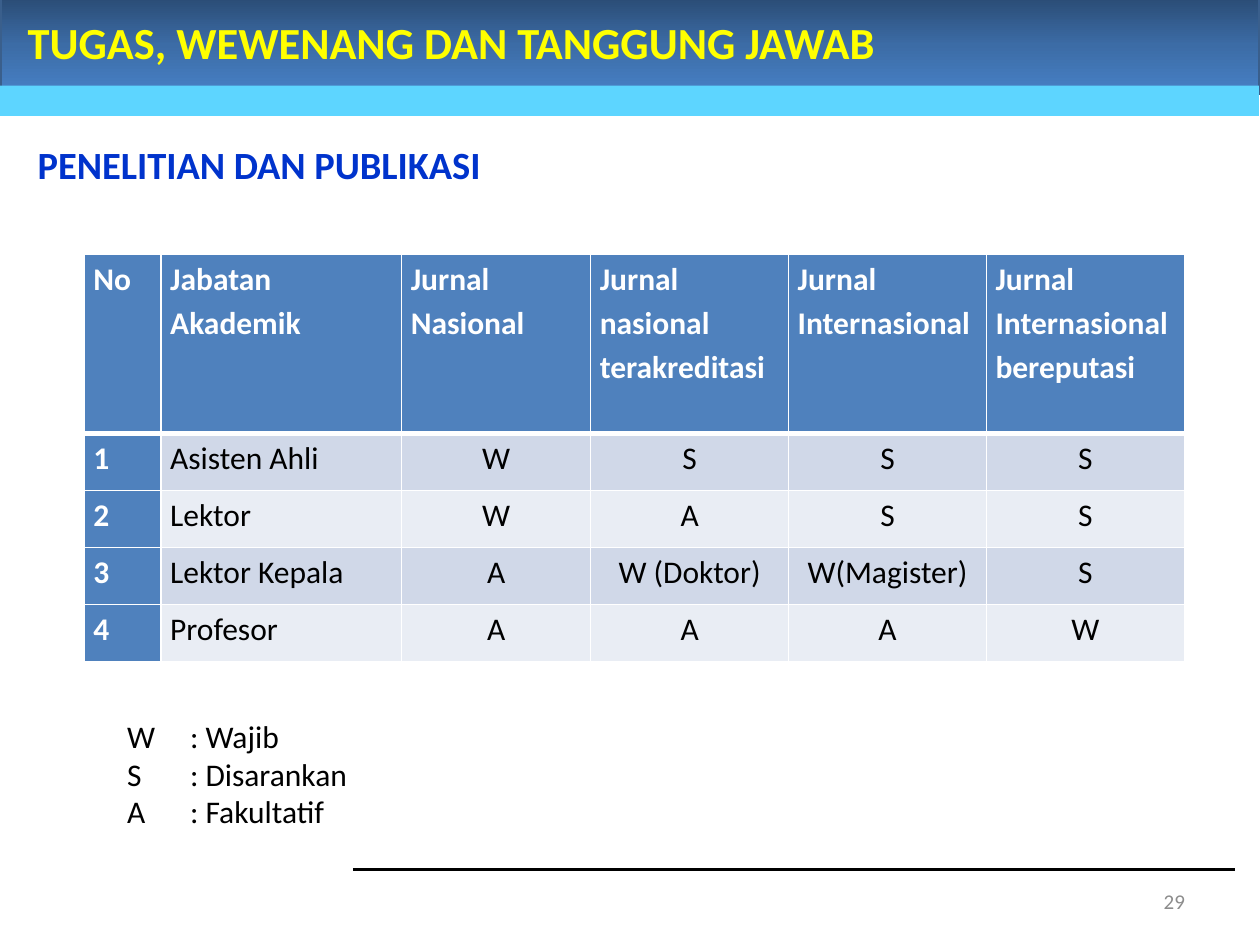
import copy

import pptx
import pptx.dml.color
import pptx.enum.shapes
import pptx.enum.text
import pptx.oxml
import pptx.oxml.ns
import pptx.util

Pt = pptx.util.Pt
ALIGN = pptx.enum.text.PP_ALIGN
ANCHOR = pptx.enum.text.MSO_ANCHOR
RECTANGLE = pptx.enum.shapes.MSO_SHAPE.RECTANGLE

POSITIONS = [
    ["No", "Jabatan Akademik", "Jurnal Nasional", "Jurnal nasional terakreditasi",
     "Jurnal Internasional", "Jurnal Internasional bereputasi"],
    ["1", "Asisten Ahli", "W", "S", "S", "S"],
    ["2", "Lektor", "W", "A", "S", "S"],
    ["3", "Lektor Kepala", "A", "W (Doktor)", "W(Magister)", "S"],
    ["4", "Profesor", "A", "A", "A", "W"],
]
COLUMN_WIDTHS = [43.9, 137.5, 108, 113.1, 113.1, 113.1]
HEADER_HEIGHT, ROW_HEIGHT = 102.2, 32.6
HEAD_FILL, BAND_FILLS = "4F81BD", ["E9EDF4", "D0D8E8"]
LEGEND = ["W\t: Wajib", "S\t: Disarankan", "A\t: Fakultatif"]


def rgb(colour):
    return pptx.dml.color.RGBColor.from_string(colour)


def points(box):
    return [Pt(length) for length in box]


def set_all(target, values):
    for name, value in values.items():
        setattr(target, name, value)


def write(frame, lines, size, colour, bold=False, **paragraph_format):
    for index, line in enumerate(lines):
        paragraph = frame.paragraphs[0] if index == 0 else frame.add_paragraph()
        set_all(paragraph, paragraph_format)
        run = paragraph.add_run()
        run.text = line
        set_all(run.font, {"name": "Calibri", "size": Pt(size), "bold": bold})
        run.font.color.rgb = rgb(colour)


def add_text(slide, box, lines, size, colour, bold=False, anchor=ANCHOR.TOP,
             align=ALIGN.LEFT):
    frame = slide.shapes.add_textbox(*points(box)).text_frame
    set_all(frame, {"word_wrap": True, "vertical_anchor": anchor})
    write(frame, lines, size, colour, bold, alignment=align)


def add_banner(slide, box):
    """Gradient band with the title on it and a light strip below."""
    left, top, width, height = box
    band = slide.shapes.add_shape(RECTANGLE, *points(box))
    band.shadow.inherit = False
    band.fill.gradient()
    band.fill.gradient_angle = 270
    stop_list = band.element.find(".//" + pptx.oxml.ns.qn("a:gsLst"))
    stop_list.insert(1, copy.deepcopy(stop_list[0]))
    stops = [(0, "2A4C75"), (0.5, "3C6CA6"), (1, "4780C5")]
    for stop, (position, colour) in zip(band.fill.gradient_stops, stops):
        stop.position = position
        stop.color.rgb = rgb(colour)
    band.line.color.rgb = rgb("3A5F8C")
    band.line.width = Pt(2)

    strip = slide.shapes.add_shape(
        RECTANGLE, *points((left - 1.4, top + 50.4, width + 0.7, 17.3)))
    strip.shadow.inherit = False
    strip.fill.solid()
    strip.fill.fore_color.rgb = rgb("5DD5FF")
    strip.line.fill.background()

    title = slide.shapes.title
    title_box = points((left + 8.6, top - 0.7, 680.4, 51.8))
    set_all(title, dict(zip(["left", "top", "width", "height"], title_box)))
    set_all(title.text_frame, {"word_wrap": True, "vertical_anchor": ANCHOR.MIDDLE,
                               "auto_size": pptx.enum.text.MSO_AUTO_SIZE.NONE})
    write(title.text_frame, ["TUGAS, WEWENANG DAN TANGGUNG JAWAB"], 25.4, "FFFF00",
          True, alignment=ALIGN.LEFT)
    strip.element.addnext(title.element)


def add_borders(cell, widths):
    properties = cell._tc.get_or_add_tcPr()
    for side, width in widths.items():
        properties.append(pptx.oxml.parse_xml(
            f'<a:ln{side} {pptx.oxml.ns.nsdecls("a")} w="{Pt(width)}"><a:solidFill>'
            f'<a:srgbClr val="FFFFFF"/></a:solidFill></a:ln{side}>'))


def add_positions_table(slide, left, top):
    heights = [HEADER_HEIGHT] + [ROW_HEIGHT] * (len(POSITIONS) - 1)
    box = points((left, top, sum(COLUMN_WIDTHS), sum(heights)))
    table = slide.shapes.add_table(len(heights), len(COLUMN_WIDTHS), *box).table
    for column, width in zip(table.columns, COLUMN_WIDTHS):
        column.width = Pt(width)
    for r, (row, height) in enumerate(zip(POSITIONS, heights)):
        table.rows[r].height = Pt(height)
        for c, content in enumerate(row):
            cell = table.cell(r, c)
            is_head = r == 0 or c == 0
            set_all(cell, {"margin_left": Pt(5.2), "margin_right": Pt(5.2),
                           "margin_top": 0, "margin_bottom": 0})
            add_borders(cell, {"L": 1, "R": 1, "T": 3 if r == 1 else 1,
                               "B": 3 if r == 0 else 1})
            cell.fill.solid()
            cell.fill.fore_color.rgb = rgb(HEAD_FILL if is_head else BAND_FILLS[r % 2])
            write(cell.text_frame, [content], 18, "FFFFFF" if is_head else "000000",
                  is_head, line_spacing=1.15, space_after=Pt(12),
                  alignment=ALIGN.CENTER if r and c > 1 else ALIGN.JUSTIFY)


def add_footer(slide, left, top, width):
    """Rule across the foot of the slide with the page number below it."""
    rule = slide.shapes.add_connector(
        pptx.enum.shapes.MSO_CONNECTOR.STRAIGHT, *points((left, top, left + width, top)))
    rule.line.color.rgb = rgb("000000")
    rule.line.width = Pt(1.75)
    rule.element.spPr.append(
        pptx.oxml.parse_xml(f'<a:effectLst {pptx.oxml.ns.nsdecls("a")}/>'))
    add_text(slide, (left + width - 189.4, top + 3.6, 168, 28.8), ["29"], 12, "8C8C8C",
             anchor=ANCHOR.MIDDLE, align=ALIGN.RIGHT)


def main():
    presentation = pptx.Presentation()
    set_all(presentation, {"slide_width": Pt(720), "slide_height": Pt(540)})
    slide = presentation.slides.add_slide(presentation.slide_layouts[5])
    add_banner(slide, (0, -1.4, 720, 54.7))
    add_text(slide, (14.4, 77, 296.6, 33.8), ["PENELITIAN DAN PUBLIKASI"], 22, "0033CC",
             bold=True)
    add_positions_table(slide, 48.2, 145.4)
    add_text(slide, (65.5, 406.1, 510.5, 72.7), LEGEND, 18, "000000")
    add_footer(slide, 201.6, 496.8, 504)
    presentation.save("out.pptx")


if __name__ == "__main__":
    main()
